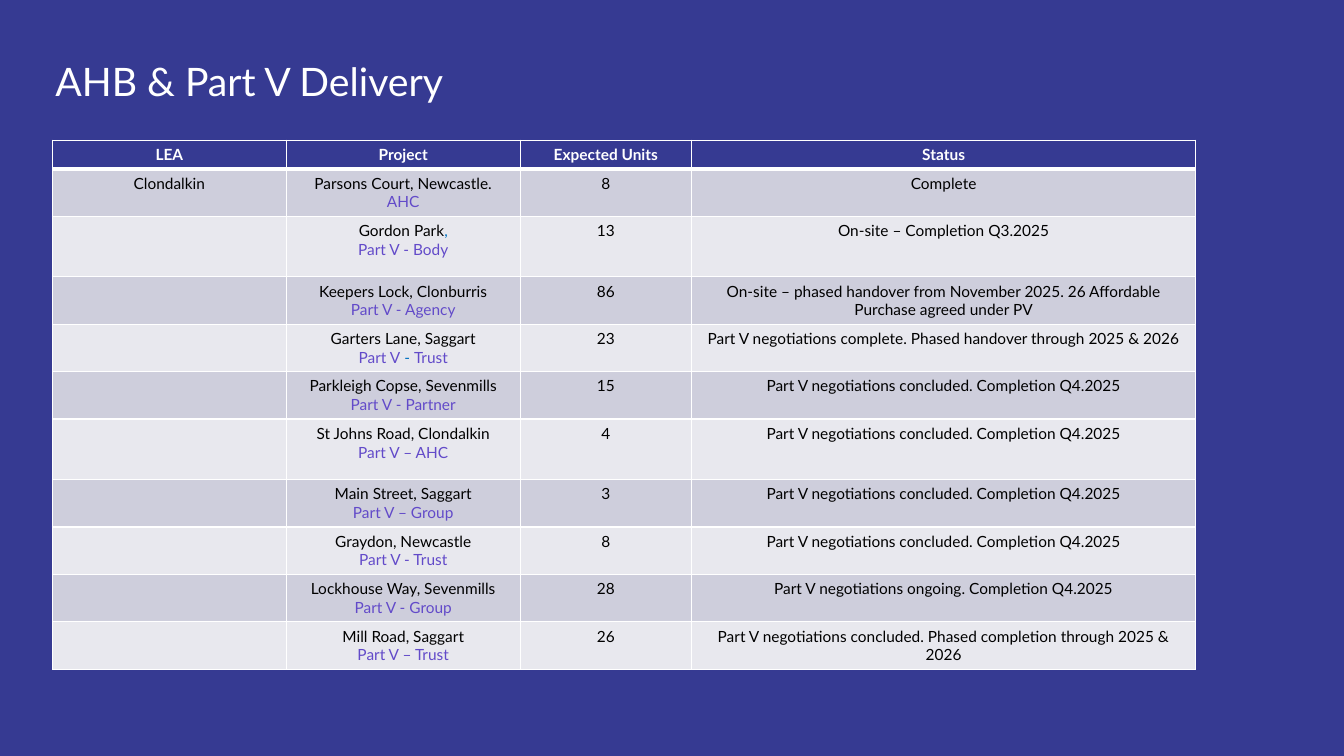
from lxml.etree import SubElement
from pptx import Presentation
from pptx.dml.color import RGBColor
from pptx.enum.text import MSO_ANCHOR as Anchor, MSO_AUTO_SIZE as AutoSize, PP_ALIGN as Align
from pptx.oxml.ns import qn
from pptx.util import Inches, Pt

COLORS = {
    "navy": "363A92", "white": "FFFFFF", "black": "000000", "violet": "624AC9",
    "blue": "0070C0", "band_dark": "CECEDC", "band_light": "E8E8EE",
}
HEADINGS = ["LEA", "Project", "Expected Units", "Status"]
COLUMN_WIDTHS = [2.32, 2.32, 1.7, 5.0]
HEADER_HEIGHT, ROW_HEIGHT, TALL_ROW_HEIGHT = 0.28, 0.47, 0.6
TALL_ROWS = {2, 6}
CONCLUDED = "Part V negotiations concluded. Completion Q4.2025"

# Area, site, housing body, units, status; a tuple is (text, colour)
PROJECTS = [
    ("Clondalkin", ["Parsons Court, Newcastle."], ["AHC"], "8", "Complete"),
    ("", ["Gordon Park", (",", "blue")], ["Part V - Body"], "13", "On-site – Completion Q3.2025"),
    ("", ["Keepers Lock, Clonburris"], ["Part V - Agency"], "86",
     "On-site – phased handover from November 2025. 26 Affordable Purchase agreed under PV"),
    ("", ["Garters Lane, Saggart"], ["Part V", (" - ", "blue"), "Trust"], "23",
     "Part V negotiations complete. Phased handover through 2025 & 2026"),
    ("", ["Parkleigh Copse, Sevenmills"], ["Part V - Partner"], "15", CONCLUDED),
    ("", ["St Johns Road, Clondalkin"], ["Part V – AHC"], "4", CONCLUDED),
    ("", ["Main Street, Saggart"], ["Part V – Group"], "3", CONCLUDED),
    ("", ["Graydon, Newcastle"], ["Part V - Trust"], "8", CONCLUDED),
    ("", ["Lockhouse Way, Sevenmills"], ["Part V - Group"], "28",
     "Part V negotiations ongoing. Completion Q4.2025"),
    ("", ["Mill Road, Saggart"], ["Part V – Trust"], "26",
     "Part V negotiations concluded. Phased completion through 2025 & 2026"),
]


def rgb(name):
    return RGBColor.from_string(COLORS[name])


class SlideBuilder:
    font_name = "Lato"
    title_size = 28
    table_size = 11

    def __init__(self, presentation):
        self.slide = presentation.slides.add_slide(presentation.slide_layouts[5])
        background = self.slide.background.fill
        background.solid()
        background.fore_color.rgb = rgb("navy")

    def style(self, run, size, color, bold=False):
        run.font.name = self.font_name
        run.font.size = Pt(size)
        run.font.bold = bold
        run.font.color.rgb = rgb(color)

    def title(self, text, left, top, width, height):
        shape = self.slide.shapes.title
        shape.left, shape.top = Inches(left), Inches(top)
        shape.width, shape.height = Inches(width), Inches(height)
        frame = shape.text_frame
        frame.text = text
        frame.word_wrap = True
        frame.auto_size = AutoSize.NONE
        frame.vertical_anchor = Anchor.MIDDLE
        frame.margin_left = frame.margin_right = frame.margin_top = frame.margin_bottom = 0
        frame.paragraphs[0].alignment = Align.LEFT
        self.style(frame.paragraphs[0].runs[0], self.title_size, "white")

    def table(self, left, top, widths, heights):
        table = self.slide.shapes.add_table(
            len(heights), len(widths), Inches(left), Inches(top),
            Inches(sum(widths)), Inches(sum(heights))).table
        for column, width in zip(table.columns, widths):
            column.width = Inches(width)
        for row, height in zip(table.rows, heights):
            row.height = Inches(height)
        return table

    def cell(self, cell, lines, fill, top_border=1, bottom_border=1, bold=False):
        """Each line is (parts, colour); a part may carry its own colour."""
        frame = cell.text_frame
        for index, (parts, line_color) in enumerate(lines):
            paragraph = frame.add_paragraph() if index else frame.paragraphs[0]
            paragraph.alignment = Align.CENTER
            for part in parts:
                text, color = part if isinstance(part, tuple) else (part, line_color)
                run = paragraph.add_run()
                run.text = text
                self.style(run, self.table_size, color, bold)
        # Borders come before the fill in the cell properties
        properties = cell._tc.get_or_add_tcPr()
        for side, points in (("L", 1), ("R", 1), ("T", top_border), ("B", bottom_border)):
            line = SubElement(properties, qn(f"a:ln{side}"), w=str(Pt(points)))
            solid = SubElement(line, qn("a:solidFill"))
            SubElement(solid, qn("a:srgbClr"), val=COLORS["white"])
        cell.fill.solid()
        cell.fill.fore_color.rgb = rgb(fill)


def main():
    presentation = Presentation()
    presentation.slide_width, presentation.slide_height = Inches(13.33), Inches(7.5)
    builder = SlideBuilder(presentation)
    builder.title("AHB & Part V Delivery", 0.55, 0.52, 5.41, 0.56)

    # Table grid
    heights = [HEADER_HEIGHT] + [
        TALL_ROW_HEIGHT if row in TALL_ROWS else ROW_HEIGHT
        for row in range(1, len(PROJECTS) + 1)]
    table = builder.table(0.52, 1.39, COLUMN_WIDTHS, heights)

    # Header row
    for column, heading in enumerate(HEADINGS):
        builder.cell(table.cell(0, column), [([heading], "white")], "navy",
                     bottom_border=3, bold=True)

    # Project rows in alternating bands
    for row, (area, site, body, units, status) in enumerate(PROJECTS, start=1):
        fill = "band_dark" if row % 2 else "band_light"
        contents = [
            [([area], "black")] if area else [],
            [(site, "black"), (body, "violet")],
            [([units], "black")],
            [([status], "black")],
        ]
        for column, lines in enumerate(contents):
            builder.cell(table.cell(row, column), lines, fill,
                         top_border=3 if row == 1 else 1)

    presentation.save("out.pptx")


if __name__ == "__main__":
    main()
